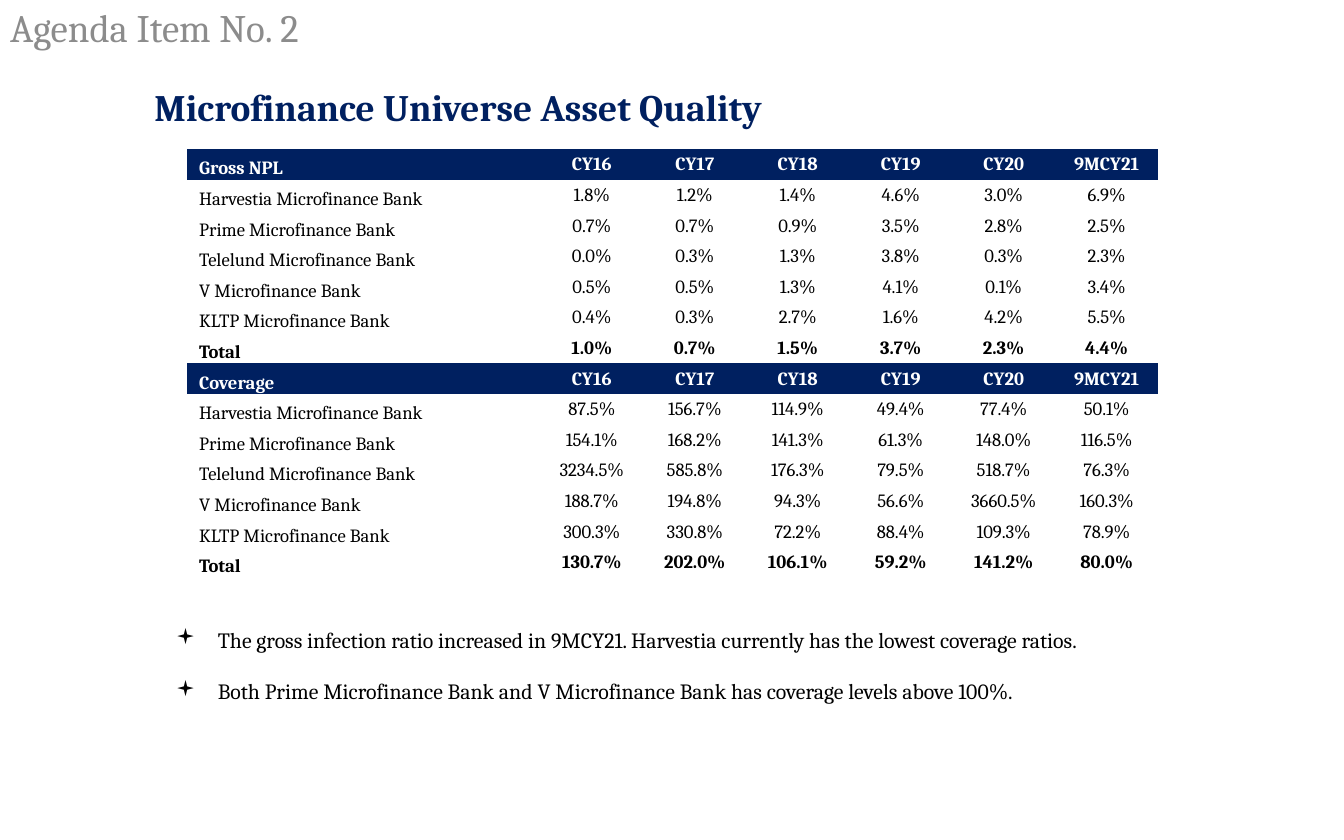
import dataclasses
import lxml.etree
import pptx
import pptx.dml.color
import pptx.enum.text
import pptx.oxml.ns
import pptx.util

Pt = pptx.util.Pt
RGB = pptx.dml.color.RGBColor
ALIGN = pptx.enum.text.PP_ALIGN
ANCHOR = pptx.enum.text.MSO_ANCHOR
qn = pptx.oxml.ns.qn


@dataclasses.dataclass(frozen=True)
class Theme:
    font: str = "Cambria"
    navy: RGB = RGB(0x00, 0x20, 0x60)
    grey: RGB = RGB(0x8C, 0x8C, 0x8C)
    black: RGB = RGB(0, 0, 0)
    white: RGB = RGB(255, 255, 255)
    agenda_size: float = 25
    heading_size: float = 24
    remark_size: float = 14
    table_size: float = 12


theme = Theme()


def write(paragraph, text, *, size, color, bold=False, align=ALIGN.LEFT,
          indent=0, bullet=None, before=0, line=1.0):
    properties = paragraph._p.get_or_add_pPr()
    properties.set("marL", str(Pt(indent)))
    properties.set("indent", str(-Pt(indent) if bullet else 0))
    paragraph.alignment = align
    paragraph.line_spacing = line
    paragraph.space_before = Pt(before)
    if bullet:
        lxml.etree.SubElement(properties, qn("a:buFont"), typeface="Wingdings")
        lxml.etree.SubElement(properties, qn("a:buChar"), char=bullet)
    run = paragraph.add_run()
    run.text = text
    run.font.name = theme.font
    run.font.size = Pt(size)
    run.font.bold = bold
    run.font.color.rgb = color


presentation = pptx.Presentation()
presentation.slide_width = Pt(864)
presentation.slide_height = Pt(540)
slide = presentation.slides.add_slide(presentation.slide_layouts[1])

agenda = slide.shapes.title
agenda.left, agenda.top, agenda.width, agenda.height = Pt(-0.7), Pt(0.7), Pt(231), Pt(36.7)
agenda.text_frame.auto_size = pptx.enum.text.MSO_AUTO_SIZE.NONE
agenda.text_frame.vertical_anchor = ANCHOR.MIDDLE
write(agenda.text_frame.paragraphs[0], "Agenda Item No. 2",
      size=theme.agenda_size, color=theme.grey, line=0.9)

heading = slide.shapes.add_textbox(Pt(92.2), Pt(46.8), Pt(481.7), Pt(43.2)).text_frame
heading.word_wrap = True
heading.vertical_anchor = ANCHOR.MIDDLE
write(heading.paragraphs[0], "Microfinance Universe Asset Quality",
      size=theme.heading_size, color=theme.navy, bold=True)

years = "CY16 CY17 CY18 CY19 CY20 9MCY21"
banks = [f"{name} Microfinance Bank" for name in ("Harvestia", "Prime", "Telelund", "V", "KLTP")]
sections = {
    "Gross NPL": [
        "1.8% 1.2% 1.4% 4.6% 3.0% 6.9%",
        "0.7% 0.7% 0.9% 3.5% 2.8% 2.5%",
        "0.0% 0.3% 1.3% 3.8% 0.3% 2.3%",
        "0.5% 0.5% 1.3% 4.1% 0.1% 3.4%",
        "0.4% 0.3% 2.7% 1.6% 4.2% 5.5%",
        "1.0% 0.7% 1.5% 3.7% 2.3% 4.4%",
    ],
    "Coverage": [
        "87.5% 156.7% 114.9% 49.4% 77.4% 50.1%",
        "154.1% 168.2% 141.3% 61.3% 148.0% 116.5%",
        "3234.5% 585.8% 176.3% 79.5% 518.7% 76.3%",
        "188.7% 194.8% 94.3% 56.6% 3660.5% 160.3%",
        "300.3% 330.8% 72.2% 88.4% 109.3% 78.9%",
        "130.7% 202.0% 106.1% 59.2% 141.2% 80.0%",
    ],
}
records = []
for measure, ratios in sections.items():
    records += zip([measure, *banks, "Total"], [years, *ratios])

quality_frame = slide.shapes.add_table(
    len(records), 7, Pt(120.2), Pt(95.8), Pt(624.4), Pt(275.8))
for style in quality_frame.element.iter(qn("a:tableStyleId")):
    style.text = "{2D5ABB26-0587-4C30-8999-92F81FD0307C}"
quality = quality_frame.table
quality.first_row = quality.horz_banding = False
for index, column in enumerate(quality.columns):
    column.width = Pt(66.2 if index else 227.2)
for row, (label, ratios) in zip(quality.rows, records):
    row.height = Pt(19.7)
    is_header = label in sections
    for index, (cell, text) in enumerate(zip(row.cells, [label, *ratios.split()])):
        cell.fill.solid()
        cell.fill.fore_color.rgb = theme.navy if is_header else theme.white
        cell.margin_left = cell.margin_right = cell.margin_top = Pt(0.7)
        cell.margin_bottom = Pt(0)
        cell.vertical_anchor = ANCHOR.MIDDLE if index else ANCHOR.BOTTOM
        write(cell.text_frame.paragraphs[0], text, size=theme.table_size,
              color=theme.white if is_header else theme.black,
              bold=is_header or label == "Total",
              align=ALIGN.CENTER if index else ALIGN.LEFT,
              indent=0 if index else 7.2)

remarks = slide.placeholders[1]
remarks.left, remarks.top, remarks.width, remarks.height = Pt(108), Pt(399.6), Pt(672), Pt(73.4)
remarks_text = remarks.text_frame
remarks_text.auto_size = pptx.enum.text.MSO_AUTO_SIZE.NONE
remarks_text.margin_left = remarks_text.margin_right = Pt(5)
remarks_text.margin_top = remarks_text.margin_bottom = Pt(3)
findings = [
    "The gross infection ratio increased in 9MCY21. Harvestia currently has the lowest coverage ratios.",
    f"Both {banks[1]} and {banks[3]} has coverage levels above 100%.",
]
for index, finding in enumerate(findings):
    paragraph = remarks_text.add_paragraph() if index else remarks_text.paragraphs[0]
    write(paragraph, finding, size=theme.remark_size, color=theme.black,
          align=ALIGN.JUSTIFY, indent=27, bullet="▪", before=16.5 * index)

presentation.save("out.pptx")
